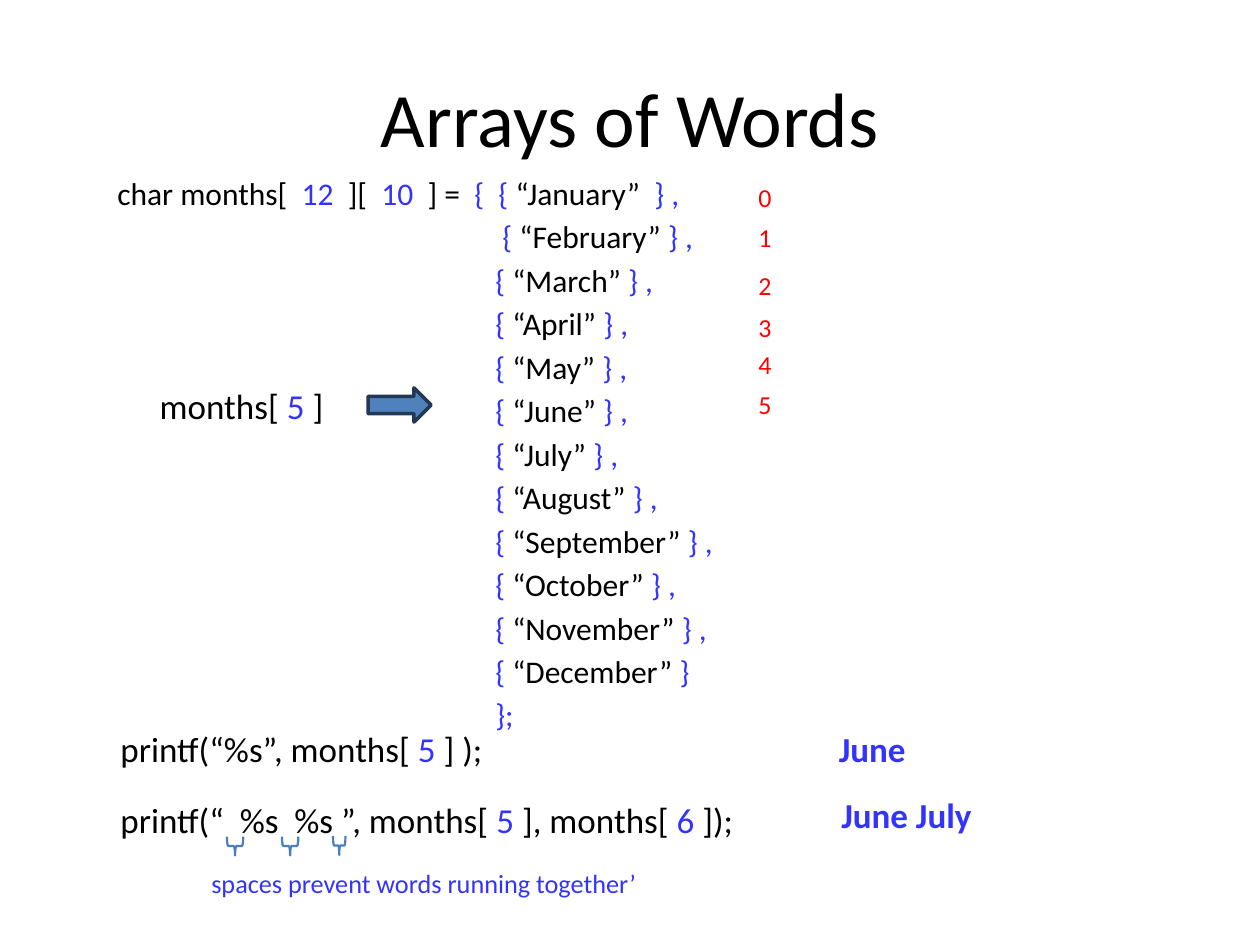
from pptx import Presentation
from pptx import util as u
from pptx.dml.color import RGBColor
from pptx.enum import shapes, text

BLACK = RGBColor(0x00, 0x00, 0x00)
BLUE = RGBColor(0x33, 0x33, 0xFF)
RED = RGBColor(0xFF, 0x00, 0x00)
ARROW_FILL = RGBColor(0x4F, 0x81, 0xBD)
ARROW_LINE = RGBColor(0x23, 0x39, 0x53)
BRACE_LINE = RGBColor(0x4B, 0x7E, 0xBC)

MONTHS = ["January", "February", "March", "April", "May", "June", "July",
          "August", "September", "October", "November", "December"]


def write(p, content, size=20, color=BLACK, accent=BLUE, bold=False,
          align=text.PP_ALIGN.LEFT, before=0.18):
    """Fill a paragraph; every second part between bars takes the accent."""
    p.alignment = align
    p.space_before = u.Pt(round(size * before, 2))
    for i, part in enumerate(content.split("|")):
        if part:
            r = p.add_run()
            r.text = part
            r.font.name = "Calibri"
            r.font.size = u.Pt(size)
            r.font.bold = bold
            r.font.color.rgb = accent if i % 2 else color


class Deck:
    """Holds the presentation, its current slide and the drawing style."""

    def __init__(self):
        self.prs = Presentation()
        self.prs.slide_width = u.Cm(25.4)
        self.prs.slide_height = u.Cm(19.05)
        self.s = self.prs.slides.add_slide(self.prs.slide_layouts[1])

    def place(self, sp, x, y, w, h):
        sp.left, sp.top, sp.width, sp.height = map(u.Cm, (x, y, w, h))

    def title(self, content, *box):
        sp = self.s.shapes.title
        self.place(sp, *box)
        tf = sp.text_frame
        tf.vertical_anchor = text.MSO_ANCHOR.MIDDLE
        write(tf.paragraphs[0], content, size=44, before=0,
              align=text.PP_ALIGN.CENTER)

    def code(self, lines, indent, *box):
        """Write code lines in the body; all but the first are indented."""
        sp = self.s.placeholders[1]
        self.place(sp, *box)
        tf = sp.text_frame
        tf.auto_size = text.MSO_AUTO_SIZE.NONE
        for i, line in enumerate(lines):
            p = tf.add_paragraph() if i else tf.paragraphs[0]
            write(p, line, size=18)
            pPr = p._p.get_or_add_pPr()
            pPr.set("marL", str(u.Cm(indent) if i else 0))
            pPr.set("indent", "0")
            pPr.append(pPr.makeelement(
                "{http://schemas.openxmlformats.org/drawingml/2006/main}buNone", {}))

    def label(self, content, x, y, w, h=1.3, **style):
        sp = self.s.shapes.add_textbox(*map(u.Cm, (x, y, w, h)))
        sp.text_frame.word_wrap = True
        write(sp.text_frame.paragraphs[0], content, **style)

    def shape(self, kind, x, y, w, h, line, weight, fill=None, rotation=0):
        sp = self.s.shapes.add_shape(kind, *map(u.Cm, (x, y, w, h)))
        sp.shadow.inherit = False
        sp.rotation = rotation
        sp.line.color.rgb = line
        sp.line.width = u.Pt(weight)
        if fill is None:
            sp.fill.background()
        else:
            sp.fill.solid()
            sp.fill.fore_color.rgb = fill


def main():
    d = Deck()
    kinds = shapes.MSO_SHAPE
    d.title("Arrays of Words", 1.27, 0.76, 22.86, 3.18)

    # Array declaration
    lines = ["char months[  |12|  ][  |10|  ] =  |{  { |“January”  |} ,"]
    for month in MONTHS[1:]:
        lead = " " if month == "February" else ""
        end = "}" if month == MONTHS[-1] else "} ,"
        lines.append(f"|{lead}{{ |“{month}” |{end}")
    lines.append("|};")
    d.code(lines, 7.62, 2.11, 3.38, 14.6, 11.86)

    # Row indices
    for i, y in enumerate([3.53, 4.34, 5.31, 6.15, 6.91, 7.7]):
        d.label(str(i), 15.04, y, 0.84, 0.79, size=14.8, color=RED)

    # Selected row
    d.label("months[ |5| ]", 2.97, 7.62, 4.01)
    d.shape(kinds.RIGHT_ARROW, 7.42, 7.82, 1.27, 0.69, ARROW_LINE, 2,
            fill=ARROW_FILL)

    # Print statements and their output
    d.label("printf(“%s”, months[ |5| ] );", 2.18, 14.55, 8.43)
    d.label("printf(“  %s  %s ”, months[ |5| ], months[ |6| ]);",
            2.18, 15.98, 14.17)
    d.label("June", 16.66, 14.55, 1.95, color=BLUE, bold=True)
    d.label("June July", 16.71, 15.88, 3.35, color=BLUE, bold=True)

    # Braces under the spaces
    for x, y, h in [(4.55, 16.89, 0.33), (5.66, 16.89, 0.33),
                    (6.65, 16.92, 0.25)]:
        d.shape(kinds.LEFT_BRACE, x, y, 0.38, h, BRACE_LINE, 1.25,
                rotation=270)
    d.label("spaces prevent words running together’", 4.01, 17.35, 9.32, 0.94,
            size=15, color=BLUE)

    d.prs.save("out.pptx")


if __name__ == "__main__":
    main()
